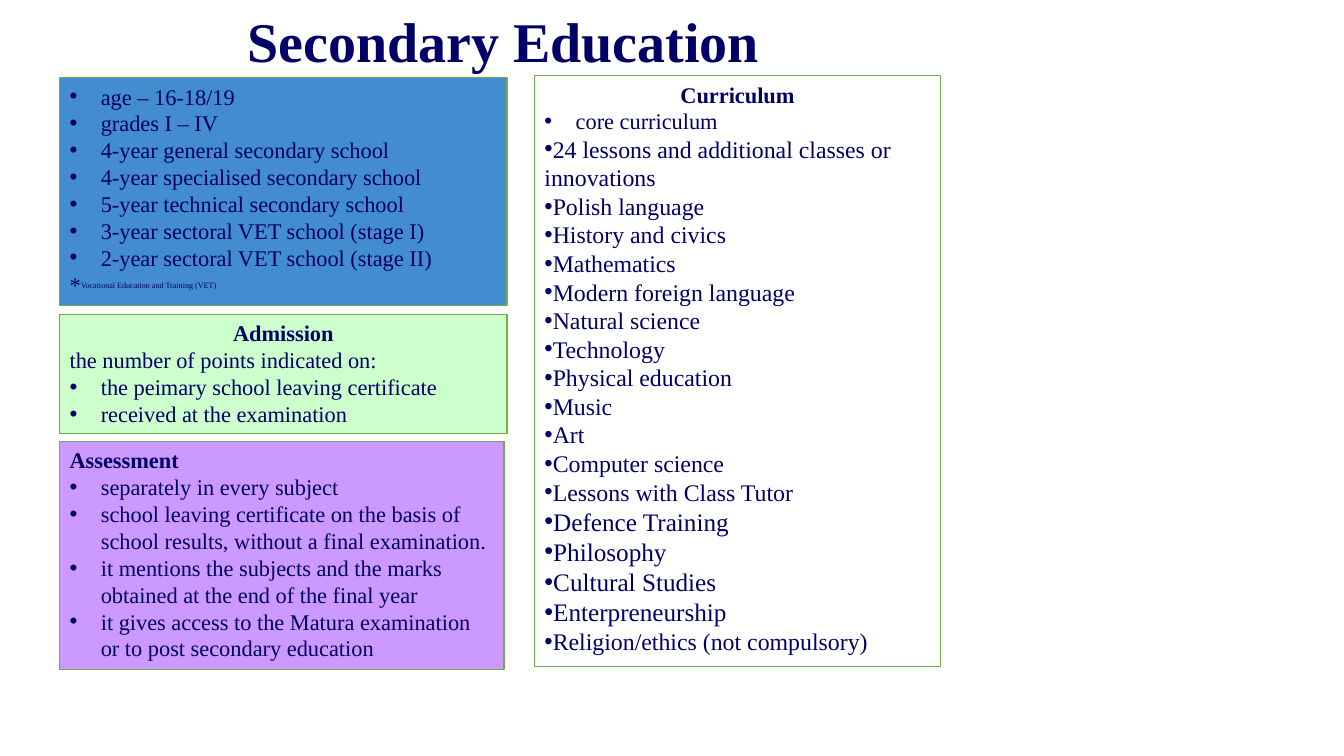
from dataclasses import dataclass

from lxml import etree
from pptx import Presentation
from pptx.dml.color import RGBColor
from pptx.enum.text import MSO_ANCHOR, MSO_AUTO_SIZE, PP_ALIGN
from pptx.oxml.ns import qn
from pptx.util import Inches, Pt

CENTER, LEFT = PP_ALIGN.CENTER, PP_ALIGN.LEFT
TOP, MIDDLE = MSO_ANCHOR.TOP, MSO_ANCHOR.MIDDLE
NO_AUTOFIT = MSO_AUTO_SIZE.NONE
COMPARISON_LAYOUT = 4


@dataclass(frozen=True)
class Theme:
    font: str = "Times New Roman"
    ink: str = "000066"
    border: str = "70AD47"
    school_fill: str = "438CCF"
    curriculum_fill: str = "FFFFFF"
    admission_fill: str = "CCFFCC"
    assessment_fill: str = "CC99FF"
    title_size: int = 40
    text_size: int = 16
    subject_size: int = 17
    extra_subject_size: int = 18
    footnote_size: int = 10
    hanging: float = 0.31


def apply_format(target, values):
    for name, value in values.items():
        setattr(target, name, value)


class SlideBuilder:
    def __init__(self, slide, theme):
        self.slide = slide
        self.theme = theme

    def place(self, index, left, top, width, height, anchor):
        holder = self.slide.placeholders[index]
        apply_format(holder, {"left": Inches(left), "top": Inches(top),
                              "width": Inches(width), "height": Inches(height)})
        apply_format(holder.text_frame, {"word_wrap": True, "auto_size": NO_AUTOFIT,
                                         "vertical_anchor": anchor})
        return holder

    def style(self, font, size, bold=False):
        apply_format(font, {"name": self.theme.font, "size": Pt(size), "bold": bold})
        font.color.rgb = RGBColor.from_string(self.theme.ink)

    def title(self, text, left, top, width, height):
        holder = self.place(0, left, top, width, height, MIDDLE)
        heading = holder.text_frame.paragraphs[0]
        heading.alignment = CENTER
        run = heading.add_run()
        run.text = text
        self.style(run.font, self.theme.title_size, True)

    def panel(self, index, fill, box, lines):
        holder = self.place(index, *box, TOP)
        holder.fill.solid()
        holder.fill.fore_color.rgb = RGBColor.from_string(fill)
        holder.line.color.rgb = RGBColor.from_string(self.theme.border)
        holder.line.width = Pt(1)
        for number, line in enumerate(lines):
            if number:
                holder.text_frame.add_paragraph()
            self.line(holder.text_frame.paragraphs[-1], **line)
        return holder

    def line(self, paragraph, text, size=None, bold=False, align=LEFT,
             bullet=False, hanging=0):
        apply_format(paragraph, {"alignment": align, "line_spacing": 1.0,
                                 "space_before": Pt(0), "space_after": Pt(0)})
        properties = paragraph._p.get_or_add_pPr()
        properties.set("marL", str(Inches(hanging)))
        properties.set("indent", str(-Inches(hanging)))
        if bullet:
            etree.SubElement(properties, qn("a:buFont")).set("typeface", "Arial")
            etree.SubElement(properties, qn("a:buChar")).set("char", "•")
        else:
            etree.SubElement(properties, qn("a:buNone"))
        run = paragraph.add_run()
        run.text = text
        self.style(run.font, size or self.theme.text_size, bold)

    def footnote(self, paragraph, text):
        run = paragraph.add_run()
        run.text = text
        self.style(run.font, self.theme.footnote_size)
        run._r.get_or_add_rPr().set("baseline", "30000")


def heading(text, align=CENTER):
    return {"text": text, "bold": True, "align": align}


def hanging_bullets(theme, *texts):
    return [{"text": text, "bullet": True, "hanging": theme.hanging} for text in texts]


def flush_bullets(size, *texts):
    return [{"text": text, "bullet": True, "size": size} for text in texts]


def main():
    theme = Theme()
    prs = Presentation()
    prs.slide_width, prs.slide_height = Inches(13.33), Inches(7.5)
    slide = prs.slides.add_slide(prs.slide_layouts[COMPARISON_LAYOUT])
    builder = SlideBuilder(slide, theme)

    builder.title("Secondary Education", -0.01, 0, 10, 0.79)

    # School types
    schools = builder.panel(1, theme.school_fill, (0.59, 0.77, 4.44, 2.26), [
        *hanging_bullets(
            theme, "age – 16-18/19", "grades I – IV",
            "4-year general secondary school", "4-year specialised secondary school",
            "5-year technical secondary school", "3-year sectoral VET school (stage I)",
            "2-year sectoral VET school (stage II)"),
        {"text": "*"},
    ])
    builder.footnote(schools.text_frame.paragraphs[-1],
                     "Vocational Education and Training (VET)")

    # Admission
    builder.panel(2, theme.admission_fill, (0.59, 3.12, 4.44, 1.18), [
        heading("Admission"),
        {"text": "the number of points indicated on:"},
        *hanging_bullets(theme, "the peimary school leaving certificate",
                         "received at the examination"),
    ])

    # Assessment
    builder.panel(3, theme.assessment_fill, (0.59, 4.38, 4.41, 2.26), [
        heading("Assessment", LEFT),
        *hanging_bullets(
            theme, "separately in every subject",
            "school leaving certificate on the basis of school results, "
            "without a final examination.",
            "it mentions the subjects and the marks obtained at the end of the final year",
            "it gives access to the Matura examination or to post secondary education"),
    ])

    # Curriculum
    builder.panel(4, theme.curriculum_fill, (5.3, 0.75, 4.03, 5.86), [
        heading("Curriculum"),
        *hanging_bullets(theme, "core curriculum"),
        *flush_bullets(
            theme.subject_size, "24 lessons and additional classes or innovations",
            "Polish language", "History and civics", "Mathematics",
            "Modern foreign language", "Natural science", "Technology",
            "Physical education", "Music", "Art", "Computer science",
            "Lessons with Class Tutor"),
        *flush_bullets(theme.extra_subject_size, "Defence Training", "Philosophy",
                       "Cultural Studies", "Enterpreneurship"),
        *flush_bullets(theme.subject_size, "Religion/ethics (not compulsory)"),
    ])

    prs.save("out.pptx")


if __name__ == "__main__":
    main()
